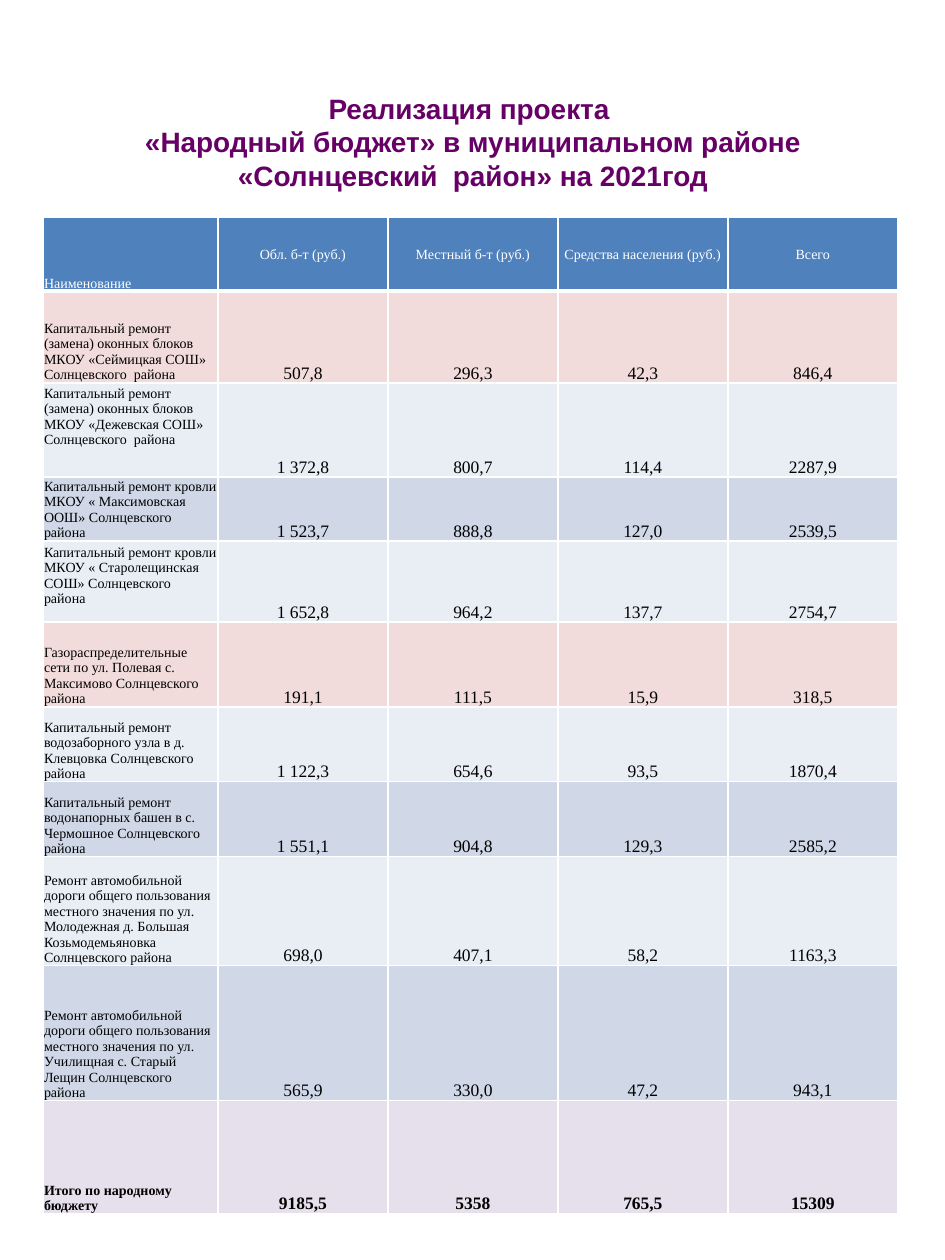
from dataclasses import dataclass

from pptx import Presentation
from pptx.dml.color import RGBColor as Color
from pptx.enum.text import MSO_ANCHOR as Anchor, PP_ALIGN as Align
from pptx.oxml import parse_xml
from pptx.oxml.ns import nsdecls
from pptx.util import Emu, Pt

PX = 914400 // 126


@dataclass(frozen=True)
class Theme:
    title_font: str = "Arial"
    table_font: str = "Times New Roman"
    title: str = "660066"
    header: str = "4F81BD"
    white: str = "FFFFFF"
    black: str = "000000"
    pink: str = "F2DCDB"
    light: str = "E9EDF4"
    blue: str = "D0D8E8"
    lilac: str = "E6E0EC"
    title_size: int = 16
    name_size: int = 8
    value_size: int = 10


THEME = Theme()
TITLE = "Реализация проекта \v«Народный бюджет» в муниципальном районе «Солнцевский  район» на 2021год"
HEADINGS = ["Наименование", "Обл. б-т (руб.)", "Местный б-т (руб.)",
            "Средства населения (руб.)", "Всего"]
COLUMN_WIDTHS = [175, 170, 170, 170, 170]
HEADER_HEIGHT = 74
PROJECTS = [
    (92, THEME.pink, 0, "Капитальный ремонт (замена) оконных блоков МКОУ «Сеймицкая СОШ» Солнцевского  района",
     ["507,8", "296,3", "42,3", "846,4"]),
    (94, THEME.light, 29, "Капитальный ремонт (замена) оконных блоков МКОУ «Дежевская СОШ» Солнцевского  района",
     ["1 372,8", "800,7", "114,4", "2287,9"]),
    (64, THEME.blue, 0, "Капитальный ремонт кровли МКОУ « Максимовская ООШ» Солнцевского  района",
     ["1 523,7", "888,8", "127,0", "2539,5"]),
    (81, THEME.light, 15, "Капитальный ремонт кровли МКОУ « Старолещинская СОШ» Солнцевского  района",
     ["1 652,8", "964,2", "137,7", "2754,7"]),
    (85, THEME.pink, 0, "Газораспределительные сети по ул. Полевая с. Максимово Солнцевского  района",
     ["191,1", "111,5", "15,9", "318,5"]),
    (75, THEME.light, 0, "Капитальный ремонт водозаборного узла в д. Клевцовка Солнцевского  района",
     ["1 122,3", "654,6", "93,5", "1870,4"]),
    (75, THEME.blue, 0, "Капитальный ремонт водонапорных башен в с. Чермошное Солнцевского  района",
     ["1 551,1", "904,8", "129,3", "2585,2"]),
    (109, THEME.light, 0, "Ремонт автомобильной дороги общего пользования местного значения по ул. "
     "Молодежная д. Большая Козьмодемьяновка Солнцевского района",
     ["698,0", "407,1", "58,2", "1163,3"]),
    (135, THEME.blue, 0, "Ремонт автомобильной дороги общего пользования местного значения по ул. "
     "Училищная с. Старый Лещин Солнцевского  района",
     ["565,9", "330,0", "47,2", "943,1"]),
    (113, THEME.lilac, 0, "Итого по народному бюджету",
     ["9185,5", "5358", "765,5", "15309"]),
]


def px(count):
    return Emu(count * PX)


def apply(target, values):
    for name, value in values.items():
        setattr(target, name, value)


def write(frame, text, align, color, **font):
    para = frame.paragraphs[0]
    para.text = text
    para.alignment = align
    for span in para.runs:
        apply(span.font, font)
        span.font.color.rgb = Color.from_string(color)


def add_borders(cell, top=1, bottom=1):
    widths = {"lnL": 1, "lnR": 1, "lnT": top, "lnB": bottom}
    properties = cell._tc.get_or_add_tcPr()
    for index, (tag, width) in enumerate(widths.items()):
        properties.insert(index, parse_xml(
            f'<a:{tag} {nsdecls("a")} w="{Pt(width)}"><a:solidFill>'
            f'<a:srgbClr val="{THEME.white}"/></a:solidFill></a:{tag}>'))


def fill_cell(cell, text, fill, color, align, size, bold=False,
              anchor=Anchor.BOTTOM, gap=0, top=1, bottom=1):
    apply(cell, {"vertical_anchor": anchor, "margin_left": px(1), "margin_right": px(1),
                 "margin_top": px(1), "margin_bottom": px(gap)})
    cell.fill.solid()
    cell.fill.fore_color.rgb = Color.from_string(fill)
    write(cell.text_frame, text, align, color, name=THEME.table_font, size=Pt(size), bold=bold)
    add_borders(cell, top, bottom)


def add_title(page):
    box = page.shapes.title
    apply(box, {"left": px(48), "top": px(50), "width": px(850), "height": px(183)})
    apply(box.text_frame, {"word_wrap": True, "vertical_anchor": Anchor.MIDDLE})
    write(box.text_frame, TITLE, Align.CENTER, THEME.title,
          name=THEME.title_font, size=Pt(THEME.title_size), bold=True)


def add_budget_table(page):
    heights = [HEADER_HEIGHT] + [project[0] for project in PROJECTS]
    table = page.shapes.add_table(len(heights), len(COLUMN_WIDTHS), px(43), px(217),
                                  px(sum(COLUMN_WIDTHS)), px(sum(heights))).table
    for column, width in zip(table.columns, COLUMN_WIDTHS):
        column.width = px(width)
    for row, height in zip(table.rows, heights):
        row.height = px(height)

    for index, heading in enumerate(HEADINGS):
        fill_cell(table.cell(0, index), heading, THEME.header, THEME.white,
                  Align.CENTER if index else Align.LEFT, THEME.name_size,
                  anchor=Anchor.MIDDLE if index else Anchor.BOTTOM, bottom=3)

    for number, (_, fill, gap, name, values) in enumerate(PROJECTS, start=1):
        shared = {"fill": fill, "color": THEME.black, "bold": number == len(PROJECTS),
                  "top": 3 if number == 1 else 1}
        fill_cell(table.cell(number, 0), name, align=Align.LEFT,
                  size=THEME.name_size, gap=gap, **shared)
        for index, value in enumerate(values, start=1):
            fill_cell(table.cell(number, index), value, align=Align.CENTER,
                      size=THEME.value_size, **shared)


def main():
    deck = Presentation()
    apply(deck, {"slide_width": px(945), "slide_height": px(1260)})
    page = deck.slides.add_slide(deck.slide_layouts[5])
    add_title(page)
    add_budget_table(page)
    deck.save("out.pptx")


if __name__ == "__main__":
    main()
